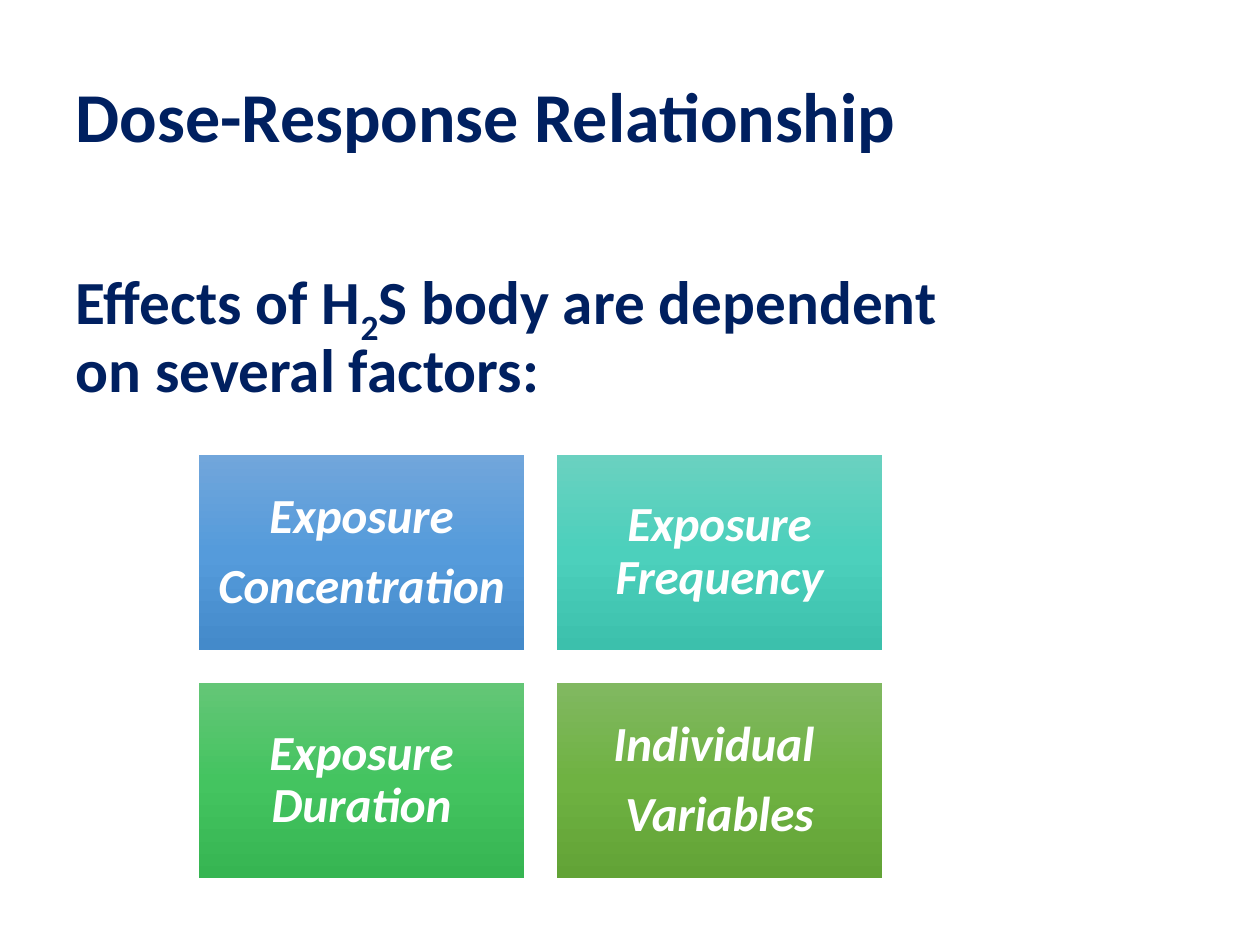
from copy import deepcopy

from lxml.etree import SubElement
from pptx import Presentation
from pptx.dml.color import RGBColor
from pptx.enum.shapes import MSO_SHAPE
from pptx.enum.text import MSO_ANCHOR, MSO_AUTO_SIZE, PP_ALIGN
from pptx.oxml.ns import qn
from pptx.util import Inches, Pt

COLORS = {
    "navy": "002060",
    "white": "FFFFFF",
    "blue": ("71A6DB", "559BDB", "448ACA"),
    "teal": ("6AD1C0", "4CD0BC", "3CC0AC"),
    "green": ("64C677", "44C460", "36B552"),
    "olive": ("81B861", "6FB242", "62A336"),
}
FACTORS = [
    ("Exposure\nConcentration", "blue"),
    ("Exposure Frequency", "teal"),
    ("Exposure Duration", "green"),
    ("Individual \nVariables", "olive"),
]
GRID_LEFT, GRID_TOP = 1.58, 3.61
TILE_WIDTH, TILE_HEIGHT, GAP = 2.58, 1.55, 0.26
COLUMNS = 2


class SlideBuilder:
    """Holds the text style and the slide being filled."""

    font = "Calibri"
    line_spacing = 0.9

    def __init__(self, page):
        self.page = page

    def format_text(self, frame, size, color, align=PP_ALIGN.LEFT, italic=None):
        for para in frame.paragraphs:
            para.alignment = align
            para.line_spacing = self.line_spacing
            for span in para.runs:
                span.font.name = self.font
                span.font.size = Pt(size)
                span.font.bold = True
                span.font.italic = italic
                span.font.color.rgb = RGBColor.from_string(COLORS[color])

    def place(self, shape, left, top, width, height):
        shape.left, shape.top = Inches(left), Inches(top)
        shape.width, shape.height = Inches(width), Inches(height)

    def title(self, text):
        title = self.page.shapes.title
        self.place(title, 0.5, 0.33, 9, 1.25)
        frame = title.text_frame
        frame.text = text
        frame.auto_size = MSO_AUTO_SIZE.NONE
        frame.vertical_anchor = MSO_ANCHOR.MIDDLE
        self.format_text(frame, 40, "navy")

    def body(self, before, subscript, after):
        """Fills the body with one unbulleted paragraph that has a subscript."""
        body = self.page.placeholders[1]
        self.place(body, 0.5, 2.05, 7.17, 4.95)
        frame = body.text_frame
        frame.auto_size = MSO_AUTO_SIZE.NONE
        para = frame.paragraphs[0]
        for text in (before, subscript, after):
            para.add_run().text = text
        self.format_text(frame, 35, "navy")
        para.space_before = Pt(7.5)
        para.runs[1].font._element.set("baseline", "-25000")
        properties = para._p.get_or_add_pPr()
        properties.set("marL", "0")
        properties.set("indent", "0")
        SubElement(properties, qn("a:buNone"))

    def fill_gradient(self, shape, colors):
        """Fills top to bottom with three evenly spaced colours."""
        fill = shape.fill
        fill.gradient()
        fill.gradient_angle = 270
        first = shape._element.spPr.find(".//" + qn("a:gs"))
        first.addnext(deepcopy(first))
        for stop, position, color in zip(fill.gradient_stops, (0, 0.5, 1), colors):
            stop.position = position
            stop.color.rgb = RGBColor.from_string(color)

    def tile(self, index, text, color):
        row, column = divmod(index, COLUMNS)
        box = self.page.shapes.add_shape(
            MSO_SHAPE.RECTANGLE,
            Inches(GRID_LEFT + column * (TILE_WIDTH + GAP)),
            Inches(GRID_TOP + row * (TILE_HEIGHT + GAP)),
            Inches(TILE_WIDTH), Inches(TILE_HEIGHT))
        box.shadow.inherit = False
        box.line.fill.background()
        self.fill_gradient(box, COLORS[color])
        frame = box.text_frame
        frame.word_wrap = True
        frame.vertical_anchor = MSO_ANCHOR.MIDDLE
        frame.margin_left = frame.margin_right = Inches(0.12)
        frame.margin_top = frame.margin_bottom = Inches(0.12)
        frame.text = text
        self.format_text(frame, 28, "white", PP_ALIGN.CENTER, italic=True)
        for para in frame.paragraphs:
            para.space_after = Pt(9.5)


def main():
    deck = Presentation()
    deck.slide_width, deck.slide_height = Inches(10), Inches(7.5)
    builder = SlideBuilder(deck.slides.add_slide(deck.slide_layouts[1]))
    builder.title("Dose-Response Relationship")
    builder.body("Effects of H", "2", "S body are dependent on several factors:")
    for index, (text, color) in enumerate(FACTORS):
        builder.tile(index, text, color)
    deck.save("out.pptx")


if __name__ == "__main__":
    main()
